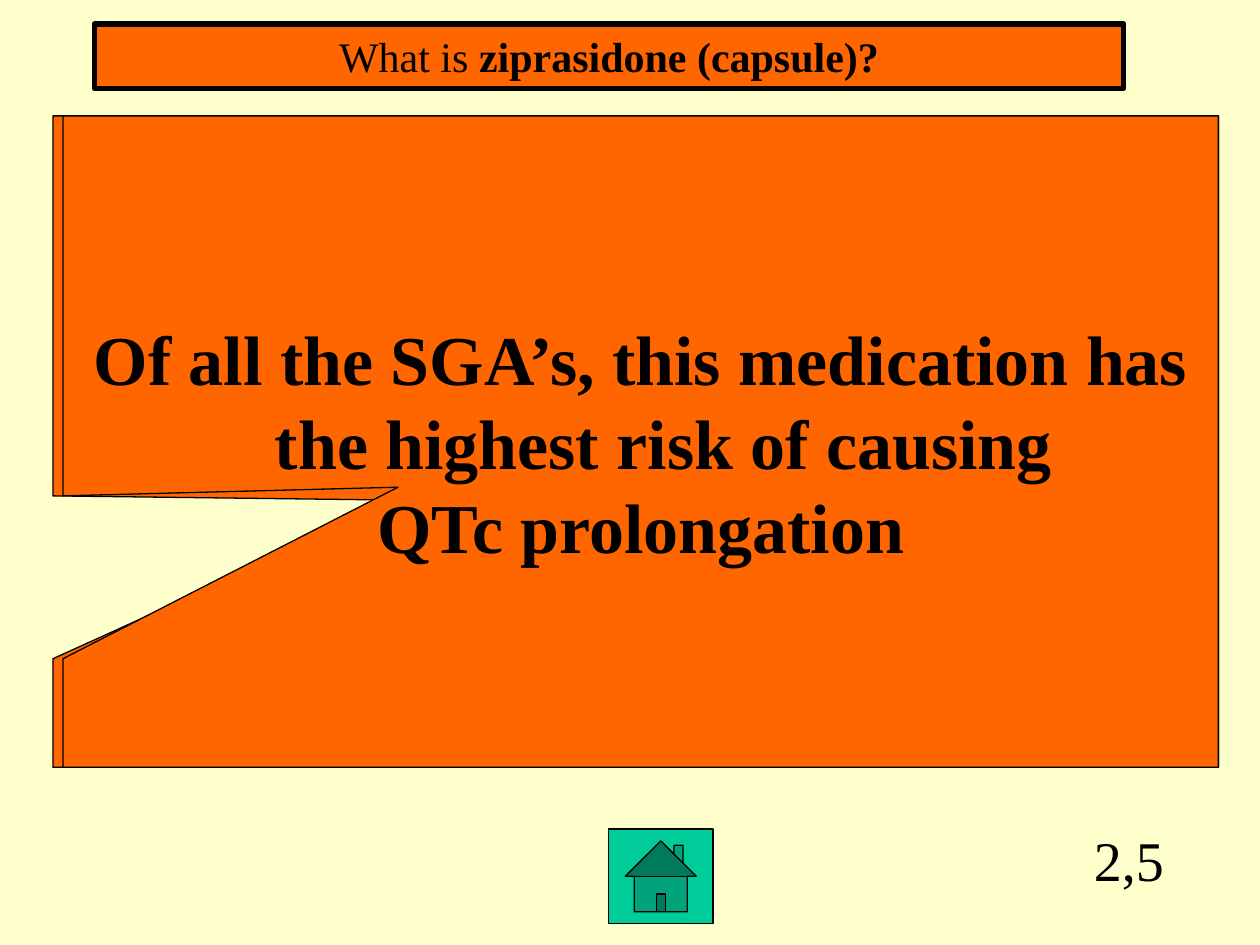
from pptx import Presentation, util as u
from pptx.dml.color import RGBColor
from pptx.enum import shapes, text

THEME = {
    "font": "Times New Roman",
    "page": "FFFFCC", "panel": "FF6600", "button": "00CC99", "ink": "000000",
    "answer": 24, "clue": 40, "score": 32,
}
W, H = 10, 7.5
SHAPE = shapes.MSO_SHAPE

prs = Presentation()
prs.slide_width, prs.slide_height = u.Inches(W), u.Inches(H)
s = prs.slides.add_slide(prs.slide_layouts[6])
s.background.fill.solid()
s.background.fill.fore_color.rgb = RGBColor.from_string(THEME["page"])


def add_box(kind, box, fill, line=0.75, adjust=()):
    sp = s.shapes.add_shape(kind, *(u.Inches(v) for v in box))
    sp.shadow.inherit = False
    sp.fill.solid()
    sp.fill.fore_color.rgb = RGBColor.from_string(THEME[fill])
    sp.line.color.rgb = RGBColor.from_string(THEME["ink"])
    sp.line.width = u.Pt(line)
    for i, value in enumerate(adjust):
        sp.adjustments[i] = value
    return sp


def write(sp, size, paragraphs, anchor, hanging=0):
    tf = sp.text_frame
    tf.word_wrap = True
    tf.vertical_anchor = anchor
    for i, runs in enumerate(paragraphs):
        p = tf.paragraphs[0] if i == 0 else tf.add_paragraph()
        p.alignment = text.PP_ALIGN.CENTER
        if hanging:
            pPr = p._p.get_or_add_pPr()
            pPr.set("marL", str(u.Inches(hanging)))
            pPr.set("indent", str(-u.Inches(hanging)))
        for words, bold in runs:
            r = p.add_run()
            r.text = words
            r.font.name = THEME["font"]
            r.font.size = u.Pt(THEME[size])
            r.font.bold = bold
            r.font.color.rgb = RGBColor.from_string(THEME["ink"])


# Score in the bottom right corner
score = s.shapes.add_textbox(*(u.Inches(v) for v in (7.92, 6.5, W - 7.92, H - 6.5)))
write(score, "score", [[("2,5", False)]], text.MSO_ANCHOR.TOP)

# Home button
add_box(SHAPE.ACTION_BUTTON_HOME, (4.83, 6.58, 0.83, 0.75), "button")

# Rear callout, sharing its right edge with the clue
right, top, height = 9.67, 0.92, 5.17
add_box(SHAPE.RECTANGULAR_CALLOUT, (0.42, top, right - 0.42, height), "panel",
        adjust=(-0.2, 0.09))

# Answer bar
answer = add_box(SHAPE.RECTANGLE, (0.75, 0.19, 8.17, 0.51), "panel", line=3)
write(answer, "answer", [[("What is", False), (" ziprasidone (capsule)?", True)]],
      text.MSO_ANCHOR.TOP, hanging=0.5)

# Clue callout
clue = add_box(SHAPE.RECTANGULAR_CALLOUT, (0.5, top, right - 0.5, height), "panel",
               adjust=(-0.21, 0.07))
write(clue, "clue", [
    [("Of all the SGA’s, this medication has the highest risk of causing ", True)],
    [("QTc prolongation", True)],
], text.MSO_ANCHOR.MIDDLE, hanging=0.5)

prs.save("out.pptx")
